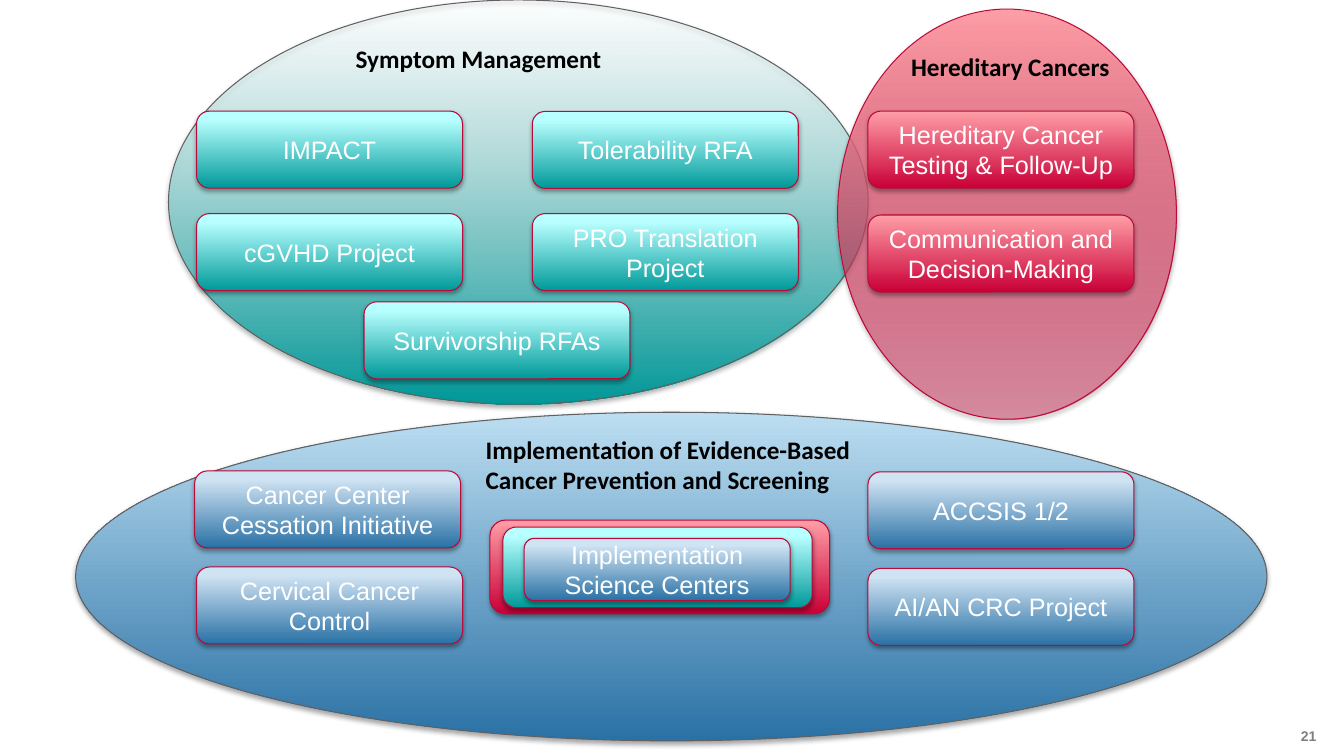
from lxml import etree
from pptx import Presentation
from pptx.dml.color import RGBColor
from pptx.enum.shapes import MSO_SHAPE as SHAPE
from pptx.enum.text import MSO_ANCHOR as ANCHOR, PP_ALIGN as ALIGN
from pptx.oxml.ns import qn
from pptx.util import Pt

# Gradients: (bottom colour, top colour, position of the top colour)
TEAL = ("009999", "B8FFFF", 0.89)
BLUE = ("2A71A5", "CFE3F3", 0.89)
RED = ("C90037", "FF9EA6", 1)
SYMPTOM = ("009999", "B8FFFF", 1)
PREVENTION = ("2A71A5", "BCDEF1", 1)
GREY_LINE, RED_LINE = "606060", "BB093A"

BOX_W, BOX_H = 190, 55
LEFT, MIDDLE, RIGHT = (140.4 + 239.8 * i for i in range(3))


def rgb(color):
    return RGBColor.from_string(color)


def add_shadow(s):
    s.shadow.inherit = False
    effects = s._element.spPr.find(qn("a:effectLst"))
    shadow = etree.SubElement(effects, qn("a:outerShdw"), blurRad=str(Pt(3.1)),
                              dist=str(Pt(1.8)), dir="5400000", rotWithShape="0")
    black = etree.SubElement(shadow, qn("a:srgbClr"), val="000000")
    etree.SubElement(black, qn("a:alpha"), val="35000")


def set_gradient(s, gradient, opacities):
    """Fill from bottom to top, with one opacity in percent for each stop."""
    bottom, top, top_position = gradient
    s.fill.gradient()
    s.fill.gradient_angle = 90
    stops = s.fill.gradient_stops
    for stop, color, position in zip(stops, (bottom, top), (0, top_position)):
        stop.color.rgb = rgb(color)
        stop.position = position
    for color, opacity in zip(s._element.spPr.iter(qn("a:srgbClr")), opacities):
        if opacity < 100:
            etree.SubElement(color, qn("a:alpha"), val=str(opacity * 1000))


def add_panel(slide, kind, bounds, gradient, line, opacities=(100, 100)):
    s = slide.shapes.add_shape(kind, *map(Pt, bounds))
    set_gradient(s, gradient, opacities)
    s.line.color.rgb = rgb(line)
    s.line.width = Pt(0.75)
    add_shadow(s)
    return s


def write(s, text, size, font, color, bold=False, align=ALIGN.LEFT):
    tf = s.text_frame
    tf.word_wrap = True
    p = tf.paragraphs[0]
    p.text = text
    p.alignment = align
    p.font.size = Pt(size)
    p.font.name = font
    p.font.bold = bold
    p.font.color.rgb = rgb(color)
    return tf


def add_box(slide, text, x, y, gradient, height=BOX_H):
    s = add_panel(slide, SHAPE.ROUNDED_RECTANGLE, (x, y, BOX_W, height),
                  gradient, RED_LINE)
    tf = write(s, text, 18, "Arial", "FFFFFF", align=ALIGN.CENTER)
    tf.vertical_anchor = ANCHOR.MIDDLE


def add_heading(slide, text, *bounds):
    s = slide.shapes.add_textbox(*map(Pt, bounds))
    write(s, text, 18, "Calibri", "000000", bold=True)


def add_page_number(slide, text):
    s = slide.shapes.add_textbox(Pt(908), Pt(518.6), Pt(32.3), Pt(14.4))
    tf = write(s, text, 10, "Arial", "7F7F7F", bold=True, align=ALIGN.RIGHT)
    tf.margin_left = tf.margin_right = tf.margin_top = tf.margin_bottom = 0
    tf.paragraphs[0].space_before = Pt(0)
    tf.vertical_anchor = ANCHOR.MIDDLE


def main():
    prs = Presentation()
    prs.slide_width, prs.slide_height = Pt(960), Pt(540)
    slide = prs.slides.add_slide(prs.slide_layouts[6])
    add_page_number(slide, "21")

    add_panel(slide, SHAPE.OVAL, (120.4, 0, 499.7, 288.7), SYMPTOM, GREY_LINE, (100, 1))
    add_panel(slide, SHAPE.OVAL, (54, 294.5, 851, 234.7), PREVENTION, GREY_LINE)
    add_panel(slide, SHAPE.OVAL, (598.3, 6.5, 242, 293), RED, RED_LINE, (37, 100))

    for bounds, gradient in (((350, 371.5, 242.6, 67), RED),
                             ((359.2, 376.5, 221, 57.6), TEAL)):
        add_panel(slide, SHAPE.ROUNDED_RECTANGLE, bounds, gradient, RED_LINE)
    add_box(slide, "Implementation Science Centers", 374.4, 384.5, BLUE, height=44.6)

    for text, x, y, gradient in (
        ("Hereditary Cancer Testing & Follow-Up", RIGHT, 79.4, RED),
        ("Communication and Decision-Making", RIGHT, 153.6, RED),
        ("AI/AN CRC Project", RIGHT, 406, BLUE),
        ("Cervical Cancer Control", LEFT, 405, BLUE),
        ("Cancer Center Cessation Initiative", 139, 336.4, BLUE),
        ("ACCSIS 1/2", RIGHT, 337, BLUE),
        ("cGVHD Project", LEFT, 152.6, TEAL),
        ("Tolerability RFA", MIDDLE, 79.6, TEAL),
        ("PRO Translation Project", MIDDLE, 152.6, TEAL),
        ("IMPACT", LEFT, 79.4, TEAL),
        ("Survivorship RFAs", 260, 215.6, TEAL),
    ):
        add_box(slide, text, x, y, gradient)

    add_heading(slide, "Symptom Management", 247, 27.4, 224, 29)
    add_heading(slide, "Hereditary Cancers", 643.7, 33.1, 224, 29)
    add_heading(slide, "Implementation of Evidence-Based Cancer Prevention and Screening",
                339.8, 306.7, 324, 51)
    prs.save("out.pptx")


if __name__ == "__main__":
    main()
